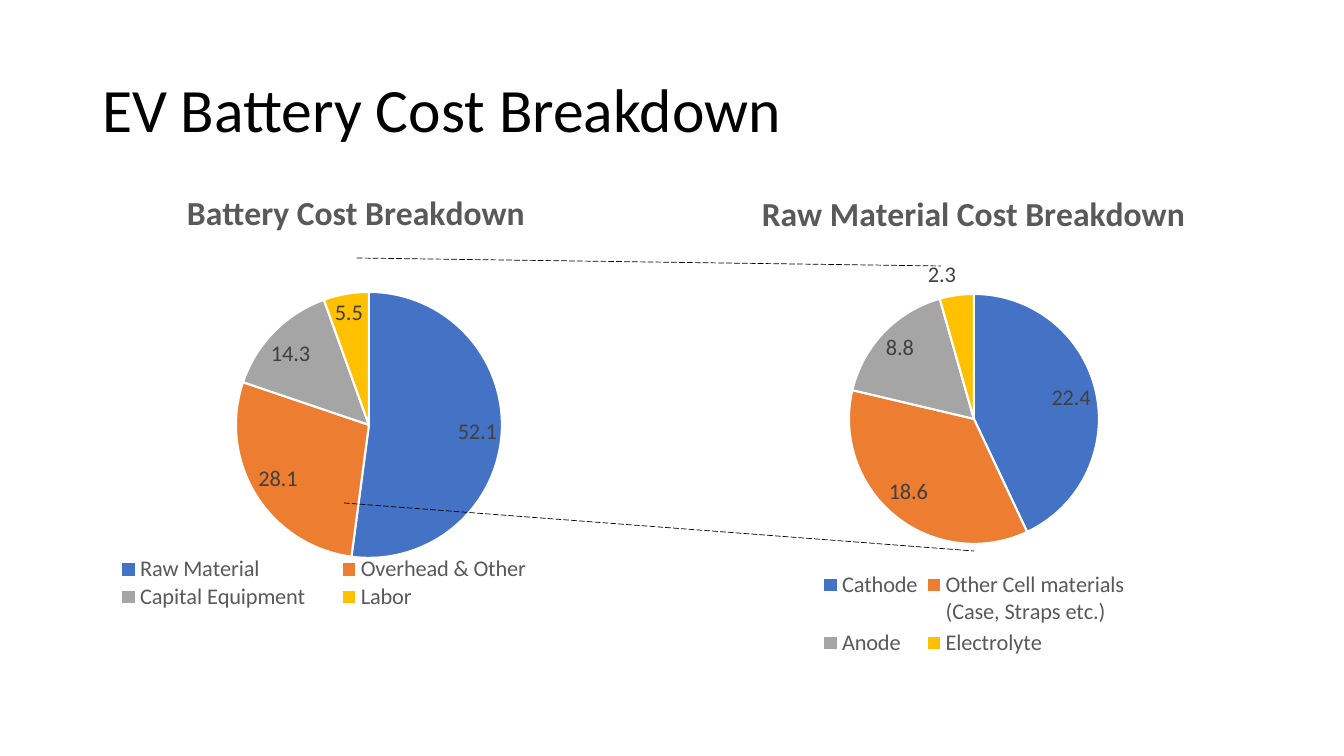
import pptx
import pptx.chart.data
import pptx.dml.color
import pptx.enum.chart
import pptx.enum.dml
import pptx.enum.shapes
import pptx.enum.text
import pptx.oxml
import pptx.oxml.ns
import pptx.util

PX = 12700 * 72 / 100.8
RGB = pptx.dml.color.RGBColor.from_string
THEME = {
    "font": "Calibri",
    "ink": RGB("000000"),
    "muted": RGB("595959"),
    "value": RGB("404040"),
    "edge": RGB("FFFFFF"),
    "slices": [RGB(code) for code in ("4472C4", "ED7D31", "A5A5A5", "FFC000")],
    "title_size": pptx.util.Pt(44),
    "heading_size": pptx.util.Pt(24),
    "label_size": pptx.util.Pt(16),
}


def write_text(frame, text, size, color, bold=False, align=None, spacing=None):
    frame.text = text
    paragraph = frame.paragraphs[0]
    paragraph.alignment = align
    paragraph.line_spacing = spacing
    font = paragraph.runs[0].font
    font.name = THEME["font"]
    font.size = size
    font.bold = bold
    font.color.rgb = color


def place_in_chart(element, position, box, chart_box, target=""):
    for old in element.findall(pptx.oxml.ns.qn("c:layout")):
        element.remove(old)
    left, top, width, height = chart_box
    fractions = {
        "x": (box[0] - left) / width,
        "y": (box[1] - top) / height,
        "w": box[2] / width,
        "h": box[3] / height,
    }
    modes = '<c:xMode val="edge"/><c:yMode val="edge"/>'
    values = "".join(f'<c:{key} val="{share:.4f}"/>' for key, share in fractions.items())
    element.insert(position, pptx.oxml.parse_xml(
        f'<c:layout {pptx.oxml.ns.nsdecls("c")}><c:manualLayout>'
        f"{target}{modes}{values}</c:manualLayout></c:layout>"
    ))


deck = pptx.Presentation()
deck.slide_width = round(1344 * PX)
deck.slide_height = round(756 * PX)
slide = deck.slides.add_slide(deck.slide_layouts[5])

title = slide.shapes.title
title.left, title.top, title.width, title.height = [round(n * PX) for n in (92, 40, 1159, 146)]
title.text_frame.vertical_anchor = pptx.enum.text.MSO_ANCHOR.MIDDLE
write_text(title.text_frame, "EV Battery Cost Breakdown", THEME["title_size"], THEME["ink"],
           align=pptx.enum.text.PP_ALIGN.LEFT, spacing=0.9)

breakdowns = [
    {
        "heading": "Battery Cost Breakdown",
        "costs": {"Raw Material": 52.1, "Overhead & Other": 28.1,
                  "Capital Equipment": 14.3, "Labor": 5.5},
        "box": (27, 170, 658, 446),
        "pie": (236, 292, 266, 266),
        "legend": (92, 556, 464, 54),
    },
    {
        "heading": "Raw Material Cost Breakdown",
        "costs": {"Cathode": 22.4, "Other Cell materials\n(Case, Straps etc.)": 18.6,
                  "Anode": 8.8, "Electrolyte": 2.3},
        "box": (621, 170, 705, 491),
        "pie": (849, 294, 250, 250),
        "legend": (814, 568, 320, 92),
    },
]

for breakdown in breakdowns:
    data = pptx.chart.data.CategoryChartData()
    data.categories = list(breakdown["costs"])
    data.add_series(breakdown["heading"], list(breakdown["costs"].values()))
    box = breakdown["box"]
    chart = slide.shapes.add_chart(
        pptx.enum.chart.XL_CHART_TYPE.PIE, *[round(n * PX) for n in box], data
    ).chart
    chart.font.name = THEME["font"]
    chart.has_title = True
    write_text(chart.chart_title.text_frame, breakdown["heading"],
               THEME["heading_size"], THEME["muted"], bold=True)
    chart.chart_title.include_in_layout = False

    chart.has_legend = True
    chart.legend.position = pptx.enum.chart.XL_LEGEND_POSITION.BOTTOM
    chart.legend.include_in_layout = False

    pie = chart.plots[0]
    pie.vary_by_categories = True
    pie.has_data_labels = True
    labels = pie.data_labels
    labels.show_value = True
    labels.show_percentage = False
    labels.position = pptx.enum.chart.XL_LABEL_POSITION.BEST_FIT

    for font, color in ((chart.legend.font, THEME["muted"]), (labels.font, THEME["value"])):
        font.name = THEME["font"]
        font.size = THEME["label_size"]
        font.color.rgb = color

    for index, color in enumerate(THEME["slices"]):
        slice_format = pie.series[0].points[index].format
        slice_format.fill.solid()
        slice_format.fill.fore_color.rgb = color
        slice_format.line.color.rgb = THEME["edge"]
        slice_format.line.width = pptx.util.Pt(1.5)

    place_in_chart(chart._chartSpace.chart.plotArea, 0, breakdown["pie"], box,
                   '<c:layoutTarget val="inner"/>')
    place_in_chart(chart.legend._element, 1, breakdown["legend"], box)

for ends in ((357, 258, 941, 266), (344, 503, 974, 551)):
    zoom_line = slide.shapes.add_connector(
        pptx.enum.shapes.MSO_CONNECTOR.STRAIGHT, *[round(n * PX) for n in ends]
    )
    zoom_line.line.color.rgb = THEME["ink"]
    zoom_line.line.width = pptx.util.Pt(0.5)
    zoom_line.line.dash_style = pptx.enum.dml.MSO_LINE.LONG_DASH
    zoom_line._element.spPr.append(
        pptx.oxml.parse_xml(f'<a:effectLst {pptx.oxml.ns.nsdecls("a")}/>')
    )

deck.save("out.pptx")
